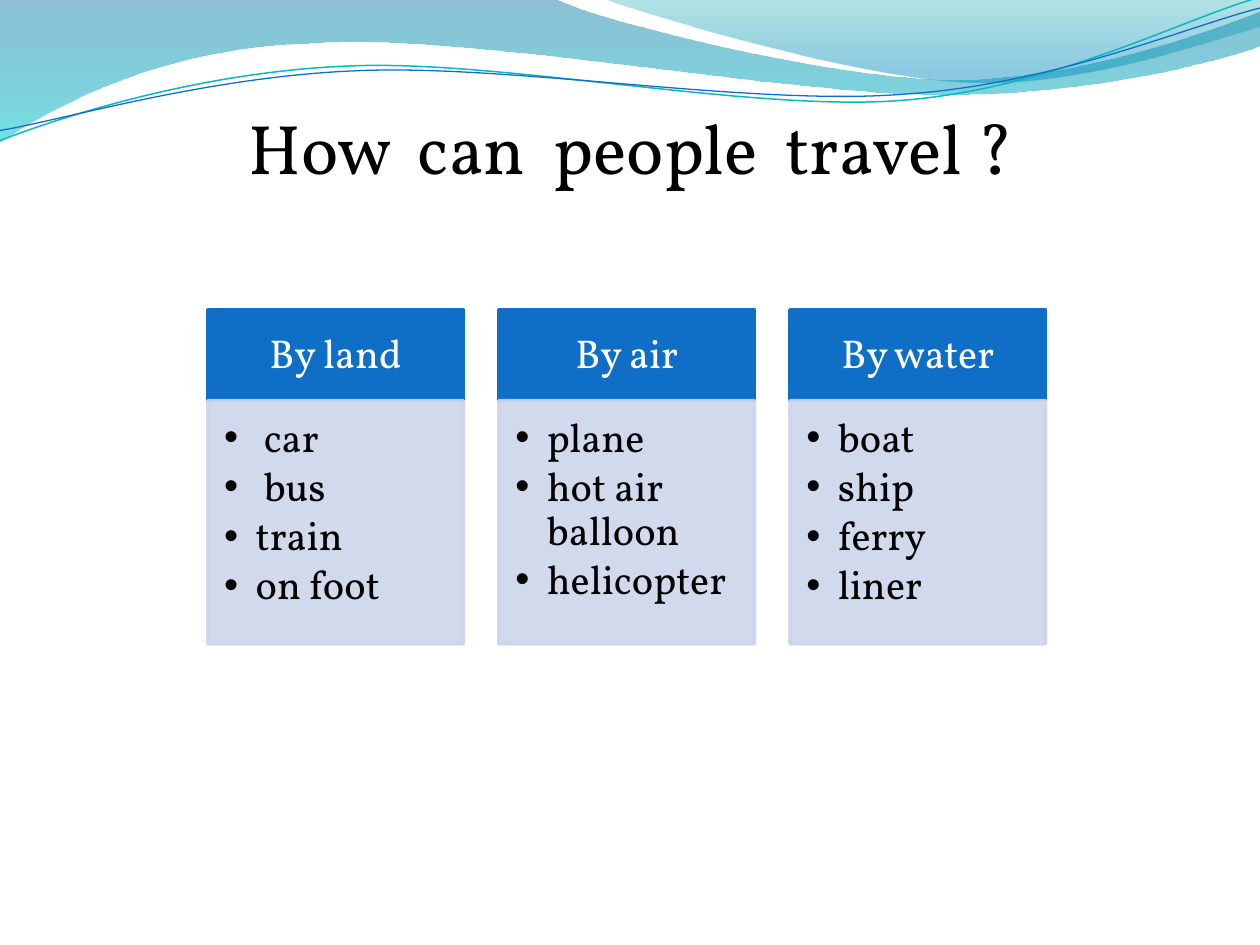
from lxml import etree
from pptx import Presentation
from pptx.dml.color import RGBColor
from pptx.enum.shapes import MSO_SHAPE
from pptx.enum.text import MSO_ANCHOR, PP_ALIGN
from pptx.oxml.ns import qn
from pptx.util import Inches, Pt

RECTANGLE = MSO_SHAPE.RECTANGLE
CENTER, LEFT = PP_ALIGN.CENTER, PP_ALIGN.LEFT
MIDDLE, TOP = MSO_ANCHOR.MIDDLE, MSO_ANCHOR.TOP

FONT = "Vollkorn"
COLORS = {
    "black": "000000", "white": "FFFFFF", "header": "0F6FC6", "body": "CCD5EA",
    "deep_blue": "0074A1", "cyan": "00C6CF", "teal": "00A1A9",
    "sky": "008BBF", "teal_line": "0AB8BF",
}
CURVE_TILT = 357.3

WIDE_WAVE = [
    (0, 0), (4.4, -0.01), (4.76, 0.17, 6.64, 0.63, 7.58, 0.63),
    (8.53, 0.63, 9.58, 0.26, 10, 0.09), (10.01, 0.36),
    (9.83, 0.44, 8.7, 0.76, 7.46, 0.75), (6.22, 0.75, 3.82, 0.28, 2.57, 0.34),
    (1.29, 0.36, 0.46, 0.83, -0.01, 1.13),
]
RIGHT_WAVE = [
    (4.79, -0.01), (5.09, 0.11, 6.82, 0.62, 7.69, 0.65),
    (8.56, 0.69, 9.61, 0.32, 10, 0.21), (10, 0),
]
TEAL_CURVE = [
    (-0.02, 0.88), (0.46, 0.72, 1.58, 0.41, 2.77, 0.42),
    (3.95, 0.42, 5.92, 0.93, 7.12, 0.9), (8.32, 0.87, 9.4, 0.36, 10, 0.22),
]
BLUE_CURVE = [
    (-0.02, 0.8), (0.45, 0.75, 1.64, 0.45, 2.83, 0.46),
    (4.03, 0.46, 5.96, 0.89, 7.16, 0.85), (8.36, 0.83, 9.43, 0.42, 10.02, 0.3),
]

COLUMNS = [
    ("By land", [" car", " bus", "train", "on foot"]),
    ("By air", ["plane", "hot air balloon", "helicopter"]),
    ("By water", ["boat", "ship", "ferry", "liner"]),
]
COLUMN_LEFT, COLUMN_PITCH, COLUMN_WIDTH = 1.65, 2.31, 2.03
HEADER_TOP, HEADER_HEIGHT, BODY_HEIGHT = 2.46, 0.72, 1.93


def color(name):
    """Return the named colour."""
    return RGBColor.from_string(COLORS[name])


def set_opacity(shape, percents):
    """Give the colours of a shape their opacities, in document order."""
    for node, percent in zip(shape.element.spPr.iter(qn("a:srgbClr")), percents):
        etree.SubElement(node, qn("a:alpha")).set("val", str(percent * 1000))


def bend(shape, segments):
    """Join the three line steps of each six-number segment into a cubic curve."""
    steps = iter(list(shape.element.spPr.iter(qn("a:lnTo"))))
    for segment in segments[1:]:
        first = next(steps)
        if len(segment) == 6:
            first.tag = qn("a:cubicBezTo")
            for step in (next(steps), next(steps)):
                first.append(step[0])
                step.getparent().remove(step)


def add_outline(page, segments, close):
    """Add a freeform of lines and cubic curves."""
    points = [
        (Inches(segment[i]), Inches(segment[i + 1]))
        for segment in segments for i in range(0, len(segment), 2)]
    builder = page.shapes.build_freeform(*points[0])
    builder.add_line_segments(points[1:], close=close)
    shape = builder.convert_to_shape()
    bend(shape, segments)
    shape.shadow.inherit = False
    return shape


def add_wave(page, segments, stops):
    """Add a wave with a see-through gradient from top to bottom."""
    wave = add_outline(page, segments, True)
    wave.line.fill.background()
    wave.fill.gradient()
    wave.fill.gradient_angle = 270
    for stop, (position, name, _) in zip(wave.fill.gradient_stops, stops):
        stop.position = position
        stop.color.rgb = color(name)
    set_opacity(wave, [opacity for _, _, opacity in stops])


def add_curve(page, segments, name, width):
    """Add a thin open curve with a slight tilt."""
    curve = add_outline(page, segments, False)
    curve.rotation = CURVE_TILT
    curve.fill.background()
    curve.line.color.rgb = color(name)
    curve.line.width = Pt(width)


def write(shape, lines, size, name, align, anchor, insets):
    """Write one paragraph per line in a shape."""
    frame = shape.text_frame
    frame.word_wrap = True
    frame.vertical_anchor = anchor
    frame.margin_left, frame.margin_top, frame.margin_right, frame.margin_bottom = (
        Inches(inset) for inset in insets)
    frame.text = "\n".join(lines)
    for para in frame.paragraphs:
        para.alignment = align
        for span in para.runs:
            span.font.name = FONT
            span.font.size = Pt(size)
            span.font.color.rgb = color(name)


def add_title(page, text):
    """Add the centred title."""
    box = page.shapes.add_textbox(Inches(0.5), Inches(0.78), Inches(9), Inches(6.14))
    write(box, [text], 40, "black", CENTER, TOP, (0.12, 0.05, 0.1, 0.05))


def add_panel(page, left, top, height, name):
    """Add a rectangle of column width in one colour."""
    panel = page.shapes.add_shape(
        RECTANGLE, Inches(left), Inches(top), Inches(COLUMN_WIDTH), Inches(height))
    panel.shadow.inherit = False
    panel.fill.solid()
    panel.fill.fore_color.rgb = color(name)
    panel.line.color.rgb = color(name)
    panel.line.width = Pt(2)
    return panel


def add_bullet(para):
    """Give a paragraph a round bullet with a hanging indent."""
    properties = para._p.get_or_add_pPr()
    properties.set("marL", str(Inches(0.25)))
    properties.set("indent", str(-Inches(0.25)))
    etree.SubElement(properties, qn("a:buFont")).set("typeface", "Arial")
    etree.SubElement(properties, qn("a:buChar")).set("char", "•")


def add_column(page, left, heading, items):
    """Add a heading panel with a bulleted panel below it."""
    header = add_panel(page, left, HEADER_TOP, HEADER_HEIGHT, "header")
    write(header, [heading], 23, "white", CENTER, MIDDLE, (0.18, 0.1, 0.18, 0.1))
    header.text_frame.paragraphs[0].line_spacing = 0.9

    body = add_panel(page, left, HEADER_TOP + HEADER_HEIGHT, BODY_HEIGHT, "body")
    set_opacity(body, [90, 90])
    write(body, items, 23, "black", LEFT, TOP, (0.13, 0.13, 0.18, 0.2))
    for para in body.text_frame.paragraphs:
        para.line_spacing = 0.91
        para.space_after = Pt(3)
        add_bullet(para)


def main():
    """Build the slide and save it."""
    deck = Presentation()
    deck.slide_width, deck.slide_height = Inches(10), Inches(7.5)
    page = deck.slides.add_slide(deck.slide_layouts[6])
    add_wave(page, WIDE_WAVE, [(0, "deep_blue", 45), (1, "cyan", 55)])
    add_wave(page, RIGHT_WAVE, [(0, "teal", 30), (0.8, "sky", 45)])
    add_curve(page, TEAL_CURVE, "teal_line", 0.85)
    add_curve(page, BLUE_CURVE, "header", 0.75)
    add_title(page, "How  can  people  travel ?")
    for index, (heading, items) in enumerate(COLUMNS):
        add_column(page, COLUMN_LEFT + index * COLUMN_PITCH, heading, items)
    deck.save("out.pptx")


if __name__ == "__main__":
    main()
